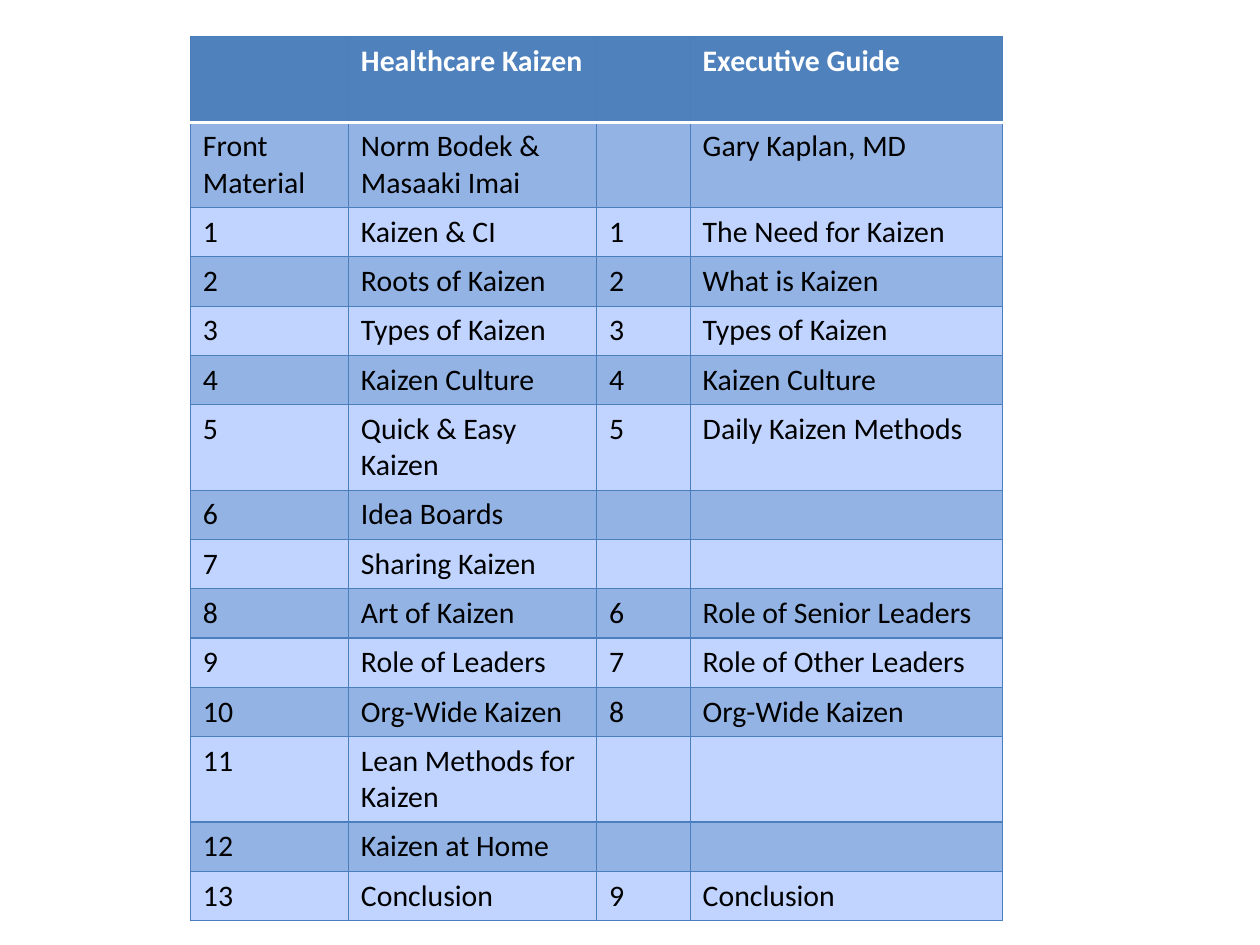
from dataclasses import dataclass

from lxml.etree import SubElement
from pptx import Presentation
from pptx.dml.color import RGBColor as Rgb
from pptx.oxml.ns import qn
from pptx.util import Pt


@dataclass(frozen=True)
class Theme:
    font: str = "Calibri"
    size: float = 17
    header: str = "4F81BD"
    band: str = "93B3E5"
    plain: str = "C0D4FF"
    grid: str = "4B7EBC"
    light: str = "FFFFFF"
    dark: str = "000000"
    grid_width: float = 0.75
    rule_width: float = 2


HEADER = ("", "Healthcare Kaizen", "", "Executive Guide")
CHAPTERS = [
    ("Front Material", "Norm Bodek & Masaaki Imai", "", "Gary Kaplan, MD"),
    ("1", "Kaizen & CI", "1", "The Need for Kaizen"),
    ("2", "Roots of Kaizen", "2", "What is Kaizen"),
    ("3", "Types of Kaizen", "3", "Types of Kaizen"),
    ("4", "Kaizen Culture", "4", "Kaizen Culture"),
    ("5", "Quick & Easy Kaizen", "5", "Daily Kaizen Methods"),
    ("6", "Idea Boards", "", ""),
    ("7", "Sharing Kaizen", "", ""),
    ("8", "Art of Kaizen", "6", "Role of Senior Leaders"),
    ("9", "Role of Leaders", "7", "Role of Other Leaders"),
    ("10", "Org-Wide Kaizen", "8", "Org-Wide Kaizen"),
    ("11", "Lean Methods for Kaizen", "", ""),
    ("12", "Kaizen at Home", "", ""),
    ("13", "Conclusion", "9", "Conclusion"),
]
COLUMN_WIDTHS = (90.3, 141.8, 53.5, 178.4)
ONE_LINE, TWO_LINES = 28.2, 48.8
TALL_ROWS = {0, 1, 6, 12}


def write(cell, text, *, font, size, color, bold=False):
    paragraph = cell.text_frame.paragraphs[0]
    if not text:
        # An empty cell keeps the type size, so its row does not grow
        SubElement(paragraph._p, qn("a:endParaRPr"), sz=str(int(size * 100)))
        return
    run = paragraph.add_run()
    run.text = text
    run.font.name, run.font.size, run.font.bold = font, Pt(size), bold
    run.font.color.rgb = Rgb.from_string(color)


class SlideBuilder:
    def __init__(self, slide, theme):
        self.slide = slide
        self.theme = theme

    def border(self, cell, side, color, width):
        line = SubElement(cell._tc.get_or_add_tcPr(), qn(f"a:ln{side}"),
                          w=str(Pt(width)))
        fill = SubElement(line, qn("a:solidFill"))
        SubElement(fill, qn("a:srgbClr"), val=color)

    def cell(self, cell, text, row):
        theme = self.theme
        is_header = row == 0
        # Grid lines, with a white rule between header and body
        rule_side = {0: "B", 1: "T"}.get(row)
        for side in "LRTB":
            if side == rule_side:
                self.border(cell, side, theme.light, theme.rule_width)
            else:
                self.border(cell, side, theme.grid, theme.grid_width)
        # Header colour, then alternating bands
        fill = theme.header if is_header else theme.band if row % 2 else theme.plain
        cell.fill.solid()
        cell.fill.fore_color.rgb = Rgb.from_string(fill)
        write(cell, text, font=theme.font, size=theme.size, bold=is_header,
              color=theme.light if is_header else theme.dark)

    def table(self, left, top, rows, widths, heights):
        frame = self.slide.shapes.add_table(
            len(rows), len(widths), Pt(left), Pt(top),
            Pt(sum(widths)), Pt(sum(heights)))
        table = frame.table
        for column, width in zip(table.columns, widths):
            column.width = Pt(width)
        for row, (texts, height) in enumerate(zip(rows, heights)):
            table.rows[row].height = Pt(height)
            for column, text in enumerate(texts):
                self.cell(table.cell(row, column), text, row)


def main():
    deck = Presentation()
    deck.slide_width, deck.slide_height = Pt(720), Pt(540)
    builder = SlideBuilder(deck.slides.add_slide(deck.slide_layouts[6]), Theme())

    # Chapter comparison of the two books
    rows = [HEADER, *CHAPTERS]
    heights = [TWO_LINES if row in TALL_ROWS else ONE_LINE
               for row in range(len(rows))]
    builder.table(108.8, 21, rows, COLUMN_WIDTHS, heights)

    deck.save("out.pptx")


if __name__ == "__main__":
    main()
